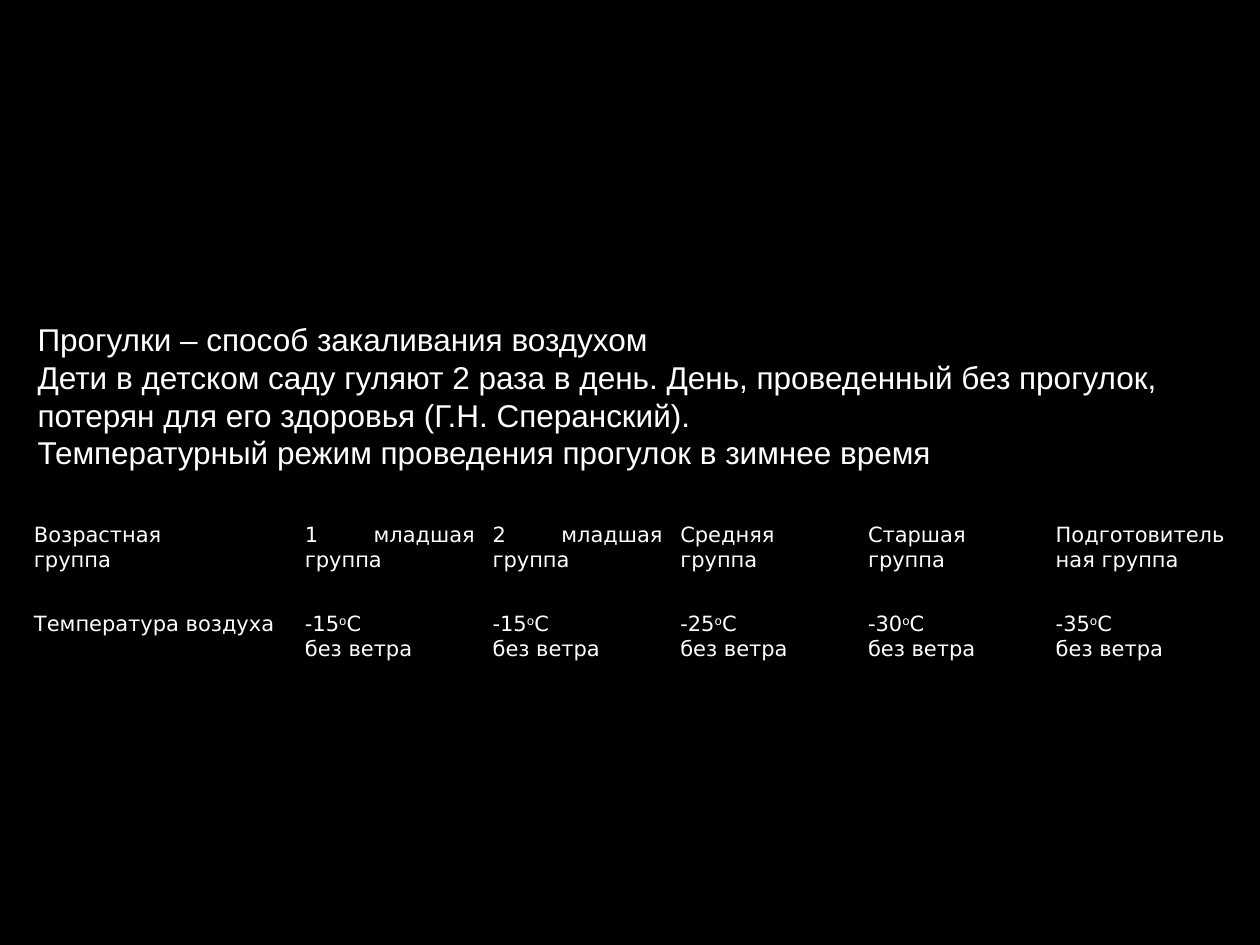
"""Build the slide on winter walks and the air temperatures allowed for each age group."""
from lxml import etree
from pptx import Presentation
from pptx.dml.color import RGBColor
from pptx.enum.text import MSO_AUTO_SIZE, PP_ALIGN
from pptx.oxml.ns import qn
from pptx.util import Inches, Pt

JUSTIFY = PP_ALIGN.JUSTIFY
GROW = MSO_AUTO_SIZE.SHAPE_TO_FIT_TEXT
COLORS = {"background": "000000", "text": "FFFFFF", "border": "000000"}

INTRO = [
    "Прогулки – способ закаливания воздухом",
    "Дети в детском саду гуляют 2 раза в день. День, проведенный без прогулок, "
    "потерян для его здоровья (Г.Н. Сперанский).",
    "Температурный режим проведения прогулок в зимнее время",
]
REGIME = {
    "1 младшая группа": "-15",
    "2 младшая группа": "-15",
    "Средняя группа": "-25",
    "Старшая группа": "-30",
    "Подготовительная группа": "-35",
}
AGE_ROW = [[["Возрастная"], ["группа"]]] + [[[group]] for group in REGIME]
AIR_ROW = [[["Температура воздуха"]]] + [
    [[degrees, "о", "С"], ["без ветра"]] for degrees in REGIME.values()
]
MARGINS = {
    "margin_left": Inches(0.07),
    "margin_right": Inches(0.07),
    "margin_top": 0,
    "margin_bottom": 0,
}


def add_text(paragraph, text, font_name, size):
    run = paragraph.add_run()
    run.text = text
    font_format = {"name": font_name, "size": Pt(size), "bold": False}
    for attribute, value in font_format.items():
        setattr(run.font, attribute, value)
    run.font.color.rgb = RGBColor.from_string(COLORS["text"])
    return run


def add_borders(cell):
    properties = cell._tc.get_or_add_tcPr()
    for side in ("a:lnL", "a:lnR", "a:lnT", "a:lnB"):
        line = etree.SubElement(properties, qn(side), w=str(Pt(1)))
        fill = etree.SubElement(line, qn("a:solidFill"))
        etree.SubElement(fill, qn("a:srgbClr"), val=COLORS["border"])


prs = Presentation()
prs.slide_width, prs.slide_height = Inches(10), Inches(7.5)
slide = prs.slides.add_slide(prs.slide_layouts[6])
slide.background.fill.solid()
slide.background.fill.fore_color.rgb = RGBColor.from_string(COLORS["background"])

intro = slide.shapes.add_textbox(
    Inches(0.2), Inches(2.49), Inches(9.53), Inches(1.31)
).text_frame
intro.word_wrap = True
intro.auto_size = GROW
for index, sentence in enumerate(INTRO):
    paragraph = intro.add_paragraph() if index else intro.paragraphs[0]
    add_text(paragraph, sentence, "Arial", 18)

regime = slide.shapes.add_table(
    2, len(AGE_ROW), Inches(0.2), Inches(4.15), Inches(9.6), Inches(1.42)
).table
regime.first_row = False
regime.horz_banding = False
for index, column in enumerate(regime.columns):
    column.width = Inches(1.49 if index else 2.15)

for row, contents in zip(regime.rows, (AGE_ROW, AIR_ROW)):
    row.height = Inches(0.71)
    for cell, lines in zip(row.cells, contents):
        for attribute, value in MARGINS.items():
            setattr(cell, attribute, value)
        add_borders(cell)
        cell.fill.background()
        for index, parts in enumerate(lines):
            frame = cell.text_frame
            paragraph = frame.add_paragraph() if index else frame.paragraphs[0]
            paragraph.alignment = JUSTIFY
            for part in parts:
                run = add_text(paragraph, part, "DejaVu Sans", 12)
                if part == "о":
                    run._r.get_or_add_rPr().set("baseline", "30000")

prs.save("out.pptx")
